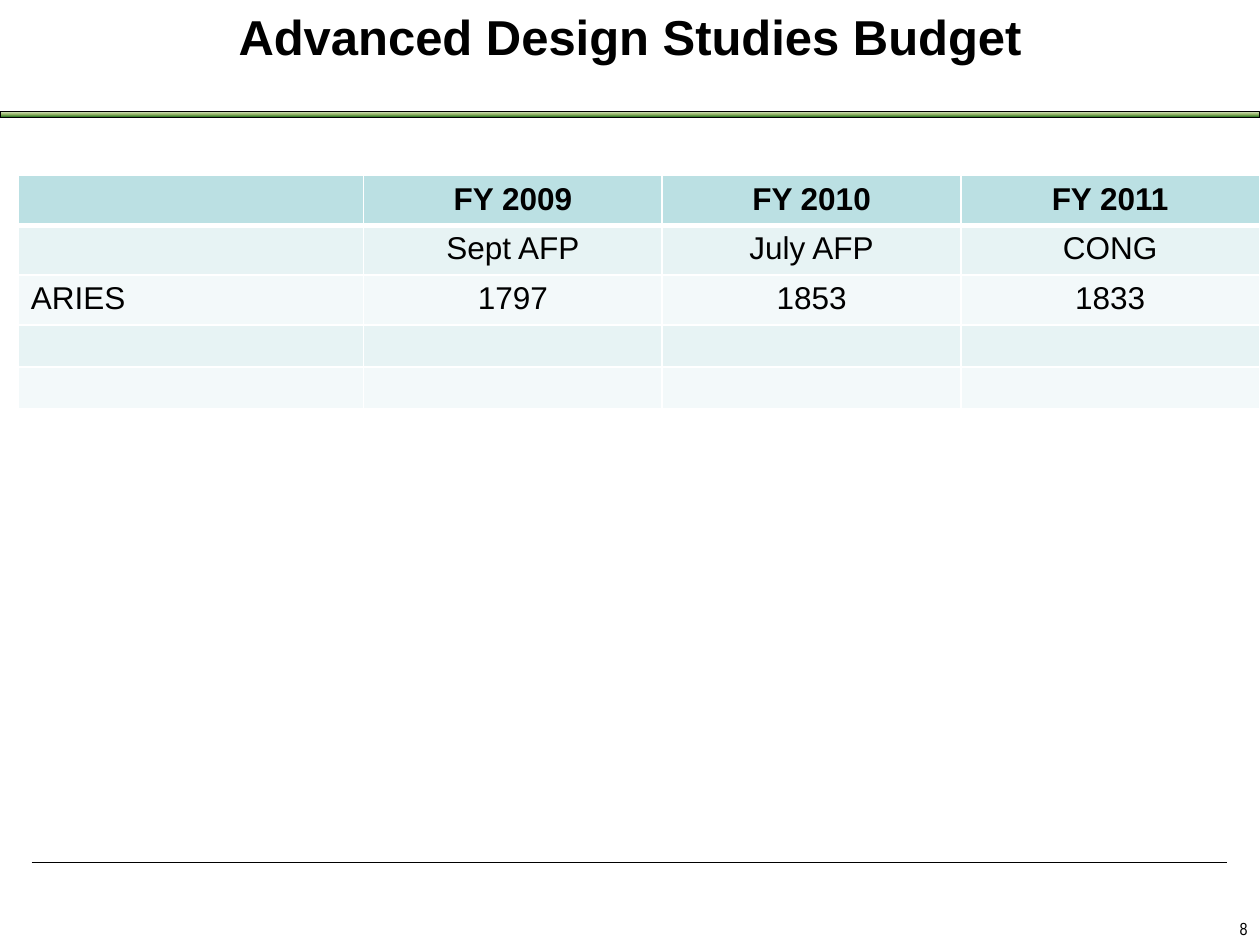
from copy import deepcopy

from lxml.etree import SubElement
from pptx import Presentation
from pptx.dml.color import RGBColor
from pptx.enum.shapes import MSO_CONNECTOR, MSO_SHAPE
from pptx.enum.text import MSO_ANCHOR, PP_ALIGN
from pptx.oxml.ns import qn
from pptx.util import Cm, Pt

TITLE = "Advanced Design Studies Budget"
PAGE_NUMBER = "8"
BUDGET = [
    ("", "FY 2009", "FY 2010", "FY 2011"),
    ("", "Sept AFP", "July AFP", "CONG"),
    ("ARIES", "1797", "1853", "1833"),
    ("", "", "", ""),
    ("", "", "", ""),
]
COLORS = {
    "text": "000000", "border": "FFFFFF", "header": "BBE0E3",
    "odd": "E7F3F4", "even": "F3F9FA",
}
BAR_STOPS = [(0, "DDEBCF"), (0.5, "9CB86E"), (1, "156B13")]
LABEL_WIDTH, YEAR_WIDTH = 6.96, 6.02
FILLED_ROW, EMPTY_ROW = 0.97, 0.85


def rgb(name):
    return RGBColor.from_string(COLORS[name])


def format_text(frame, size, align, bold=False, font="Arial"):
    for paragraph in frame.paragraphs:
        paragraph.alignment = align
        for run in paragraph.runs:
            run.font.size = Pt(size)
            run.font.bold = bold
            run.font.name = font
            run.font.color.rgb = rgb("text")


def add_borders(cell, bottom):
    properties = cell._tc.get_or_add_tcPr()
    for side, points in (("L", 1), ("R", 1), ("T", 1), ("B", bottom)):
        line = SubElement(properties, qn(f"a:ln{side}"), w=str(Pt(points)))
        fill = SubElement(line, qn("a:solidFill"))
        SubElement(fill, qn("a:srgbClr"), val=COLORS["border"])


prs = Presentation()
prs.slide_width, prs.slide_height = Cm(25.4), Cm(19.05)
slide = prs.slides.add_slide(prs.slide_layouts[5])

# Green gradient bar under the title
bar = slide.shapes.add_shape(MSO_SHAPE.RECTANGLE, 0, Cm(2.24), prs.slide_width, Cm(0.13))
bar.shadow.inherit = False
bar.fill.gradient()
bar.fill.gradient_angle = 270
first_stop = bar._element.spPr.find(f".//{qn('a:gs')}")
first_stop.addnext(deepcopy(first_stop))
for stop, (position, color) in zip(bar.fill.gradient_stops, BAR_STOPS):
    stop.position = position
    stop.color.rgb = RGBColor.from_string(color)
bar.line.color.rgb = rgb("text")
bar.line.width = Pt(0.5)

# Footer rule
rule = slide.shapes.add_connector(
    MSO_CONNECTOR.STRAIGHT, Cm(0.64), Cm(17.39), Cm(24.74), Cm(17.39))
rule.line.color.rgb = rgb("text")
rule.line.width = Pt(0.75)
SubElement(rule._element.spPr, qn("a:effectLst"))

# Page number
number = slide.shapes.add_textbox(Cm(24.36), Cm(18.39), Cm(1.04), Cm(0.66))
number.text_frame.word_wrap = True
number.text_frame.text = PAGE_NUMBER
format_text(number.text_frame, 10, PP_ALIGN.RIGHT, font="Arial Narrow")

# Budget table
row_heights = [FILLED_ROW if any(row) else EMPTY_ROW for row in BUDGET]
column_widths = [LABEL_WIDTH] + [YEAR_WIDTH] * (len(BUDGET[0]) - 1)
budget_table = slide.shapes.add_table(
    len(BUDGET), len(BUDGET[0]), Cm(0.37), Cm(3.54),
    Cm(sum(column_widths)), Cm(sum(row_heights))).table
for column, width in zip(budget_table.columns, column_widths):
    column.width = Cm(width)
for r, (values, height) in enumerate(zip(BUDGET, row_heights)):
    budget_table.rows[r].height = Cm(height)
    band = "header" if r == 0 else "odd" if r % 2 else "even"
    for c, value in enumerate(values):
        cell = budget_table.cell(r, c)
        cell.margin_top = cell.margin_bottom = Cm(0.12)
        add_borders(cell, bottom=3 if r == 0 else 1)
        cell.fill.solid()
        cell.fill.fore_color.rgb = rgb(band)
        cell.text_frame.text = value
        format_text(cell.text_frame, 18, PP_ALIGN.CENTER if c else PP_ALIGN.LEFT, bold=r == 0)
        if not value:
            # Keeps an empty cell from stretching its row
            SubElement(cell.text_frame.paragraphs[0]._p, qn("a:endParaRPr"), sz="1200")

# Title
title = slide.shapes.title
title.left, title.top, title.width, title.height = 0, 0, prs.slide_width, Cm(1.45)
title.text_frame.text = TITLE
title.text_frame.vertical_anchor = MSO_ANCHOR.BOTTOM
format_text(title.text_frame, 28, PP_ALIGN.CENTER, bold=True)

prs.save("out.pptx")
